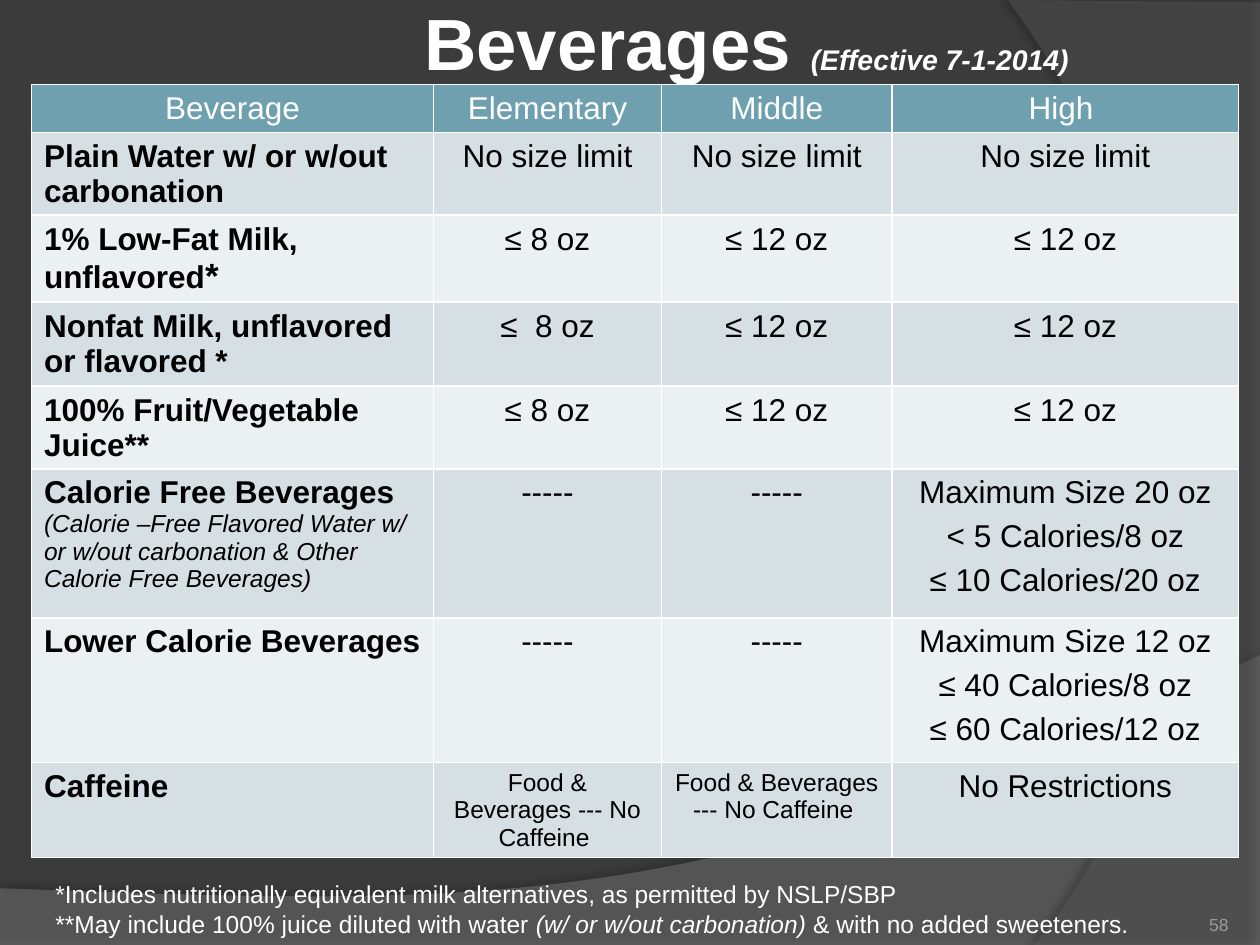
from lxml import etree
from pptx import Presentation
from pptx.dml.color import RGBColor
from pptx.enum.text import MSO_ANCHOR, PP_ALIGN
from pptx.oxml.ns import qn
from pptx.util import Pt

FONT = "Arial"
COLORS = {
    "background": "3B3B3B", "wave": "7F7F7F", "side": "5E5E5E",
    "shadow": "000000", "white": "FFFFFF", "black": "000000",
    "header": "6EA0B0", "band_dark": "D5DFE4", "band_light": "EBF0F2",
    "page_number": "9D9B9A",
}
COL_WIDTHS = [229.7, 130.3, 131.8, 198]
ROW_HEIGHTS = [27.4, 47.4, 49.7, 48, 47.4, 85, 82.8, 54.3]

# A cell is a list of paragraphs, a paragraph a list of (text, style) runs
PLAIN, BOLD, SMALL = {}, {"bold": True}, {"size": 14}
ITALIC = {"size": 14, "italic": True}


def cell_text(*lines, style=PLAIN):
    return [[(line, style)] for line in lines]


def size_row(label, *limits):
    return [label] + [cell_text(limit) for limit in limits]


NO_CAFFEINE = cell_text("Food & Beverages --- No Caffeine ", style=SMALL)
ROWS = [
    size_row(cell_text("Beverage"), "Elementary", "Middle", "High "),
    size_row(cell_text("Plain Water w/ or w/out carbonation", style=BOLD),
             *["No size limit"] * 3),
    size_row([[("1% Low-Fat Milk, unflavored", BOLD), ("*", {"bold": True, "size": 20})]],
             "≤ 8 oz", "≤ 12 oz", "≤ 12 oz"),
    size_row(cell_text("Nonfat Milk, unflavored or flavored *", style=BOLD),
             "≤  8 oz", "≤ 12 oz", "≤ 12 oz"),
    size_row(cell_text("100% Fruit/Vegetable Juice**", style=BOLD),
             "≤ 8 oz", "≤ 12 oz", "≤ 12 oz"),
    size_row([[("Calorie Free Beverages", BOLD)],
              [("(Calorie –Free Flavored Water w/ or w/out carbonation "
                "& Other Calorie Free Beverages)", ITALIC)]], "-----", "-----")
    + [cell_text("Maximum Size 20 oz", "< 5 Calories/8 oz", "≤ 10 Calories/20 oz")],
    size_row(cell_text("Lower Calorie Beverages", style=BOLD), "-----", "-----")
    + [cell_text("Maximum Size 12 oz", "≤ 40 Calories/8 oz", "≤ 60 Calories/12 oz")],
    [cell_text("Caffeine", style=BOLD), NO_CAFFEINE, NO_CAFFEINE,
     cell_text("No Restrictions")],
]


def rgb(name):
    return RGBColor.from_string(COLORS[name])


def add_run(p, text, color, size=18, bold=False, italic=False):
    r = p.add_run()
    r.text = text
    r.font.name, r.font.size = FONT, Pt(size)
    r.font.bold, r.font.italic = bold, italic
    r.font.color.rgb = rgb(color)


def fill_text(tf, paragraphs, color, align=PP_ALIGN.LEFT, gap=0):
    for i, runs in enumerate(paragraphs):
        p = tf.paragraphs[0] if i == 0 else tf.add_paragraph()
        p.alignment = align
        p.space_before = Pt(gap if i else 0)
        for text, style in runs:
            add_run(p, text, color, **style)


def add_text_box(s, box, paragraphs, color, anchor, margins=None, align=PP_ALIGN.LEFT):
    tf = s.shapes.add_textbox(*map(Pt, box)).text_frame
    tf.word_wrap = True
    tf.vertical_anchor = anchor
    if margins:
        tf.margin_left, tf.margin_top, tf.margin_right, tf.margin_bottom = map(Pt, margins)
    fill_text(tf, paragraphs, color, align)


def curve(p0, p1, p2, p3, steps=40):
    """Points along a cubic Bezier curve, without its first point."""
    points = []
    for t in (i / steps for i in range(1, steps + 1)):
        u = 1 - t
        points.append(tuple(u**3 * a + 3 * u * u * t * b + 3 * u * t * t * c + t**3 * d
                            for a, b, c, d in zip(p0, p1, p2, p3)))
    return points


def add_backdrop_shape(s, points, color, opacity, shadow):
    points = [(Pt(x), Pt(y)) for x, y in points]
    builder = s.shapes.build_freeform(*points[0], scale=1.0)
    builder.add_line_segments(points[1:], close=True)
    sp = builder.convert_to_shape()
    sp.fill.solid()
    sp.fill.fore_color.rgb = rgb(color)
    sp.line.fill.background()
    clr = sp._element.spPr.find(qn("a:solidFill"))[0]
    etree.SubElement(clr, qn("a:alpha"), val=str(opacity * 1000))
    # Soft outer shadow
    alpha, blur, dist, angle = shadow
    sp.shadow.inherit = False
    effects = sp._element.spPr.find(qn("a:effectLst"))
    outer = etree.SubElement(effects, qn("a:outerShdw"), blurRad=str(Pt(blur)),
                             dist=str(Pt(dist)), dir=str(angle * 60000), rotWithShape="0")
    shade = etree.SubElement(outer, qn("a:srgbClr"), val=COLORS["shadow"])
    etree.SubElement(shade, qn("a:alpha"), val=str(alpha * 1000))


def add_backdrop(s, width, height):
    s.background.fill.solid()
    s.background.fill.fore_color.rgb = rgb("background")
    # Wave along the bottom edge
    right, left = (width, 374.4), (0, 507.6)
    add_backdrop_shape(s, [(0, height), (width, height), right]
                       + curve(right, (402.5, 524.9), (281.5, 517.7), left),
                       "wave", 45, (35, 4, 3.5, 270))
    # Curved panel on the right
    bottom, top = (591.1, height), (576, 0)
    add_backdrop_shape(s, [(width, 1.4), (width, height), bottom]
                       + curve(bottom, (673.2, 445.7), (733, 216), top),
                       "side", 40, (45, 4, 4, 180))


def set_borders(cell, width=1):
    tcPr = cell._tc.get_or_add_tcPr()
    for i, side in enumerate(("lnL", "lnR", "lnT", "lnB")):
        ln = etree.Element(qn(f"a:{side}"), w=str(Pt(width)))
        fill = etree.SubElement(ln, qn("a:solidFill"))
        etree.SubElement(fill, qn("a:srgbClr"), val=COLORS["white"])
        tcPr.insert(i, ln)


def add_beverage_table(s, left, top):
    table = s.shapes.add_table(len(ROWS), len(COL_WIDTHS), Pt(left), Pt(top),
                               Pt(sum(COL_WIDTHS)), Pt(sum(ROW_HEIGHTS))).table
    for column, width in zip(table.columns, COL_WIDTHS):
        column.width = Pt(width)
    for i, (row, height) in enumerate(zip(ROWS, ROW_HEIGHTS)):
        table.rows[i].height = Pt(height)
        band = "header" if i == 0 else "band_dark" if i % 2 else "band_light"
        for j, paragraphs in enumerate(row):
            cell = table.cell(i, j)
            # No bottom margin, so that the text fits the row height
            cell.margin_bottom = Pt(0)
            cell.fill.solid()
            cell.fill.fore_color.rgb = rgb(band)
            set_borders(cell)
            is_label = i > 0 and j == 0
            fill_text(cell.text_frame, paragraphs, "black" if i else "white",
                      PP_ALIGN.LEFT if is_label else PP_ALIGN.CENTER,
                      gap=0 if is_label else 5)


def add_title(s, box):
    add_text_box(s, box, [[("Beverages ", {"size": 41.4, "bold": True}),
                           ("(Effective 7-1-2014)",
                            {"size": 16.2, "bold": True, "italic": True})]],
                 "white", MSO_ANCHOR.MIDDLE, margins=(210, 3.6, 3.6, 3.6))


def add_footnotes(s, box):
    add_text_box(s, box, [
        [("*Includes nutritionally equivalent milk alternatives, "
          "as permitted by NSLP/SBP", SMALL)],
        [("**May include 100% juice diluted with water ", SMALL),
         ("(w/ or w/out carbonation) ", ITALIC),
         ("& with no added sweeteners.", SMALL)],
    ], "white", MSO_ANCHOR.TOP)


def add_page_number(s, box):
    add_text_box(s, box, [[("58", {"size": 10})]], "page_number",
                 MSO_ANCHOR.BOTTOM, margins=(0, 0, 0, 0), align=PP_ALIGN.RIGHT)


def main():
    prs = Presentation()
    prs.slide_width, prs.slide_height = Pt(720), Pt(540)
    s = prs.slides.add_slide(prs.slide_layouts[6])
    add_backdrop(s, 720, 540)
    add_title(s, (32.4, 0, 648, 47.5))
    add_page_number(s, (642.2, 505.4, 59.8, 28.8))
    add_beverage_table(s, 18, 48.2)
    add_footnotes(s, (24.5, 499, 678.2, 41))
    prs.save("out.pptx")


if __name__ == "__main__":
    main()
